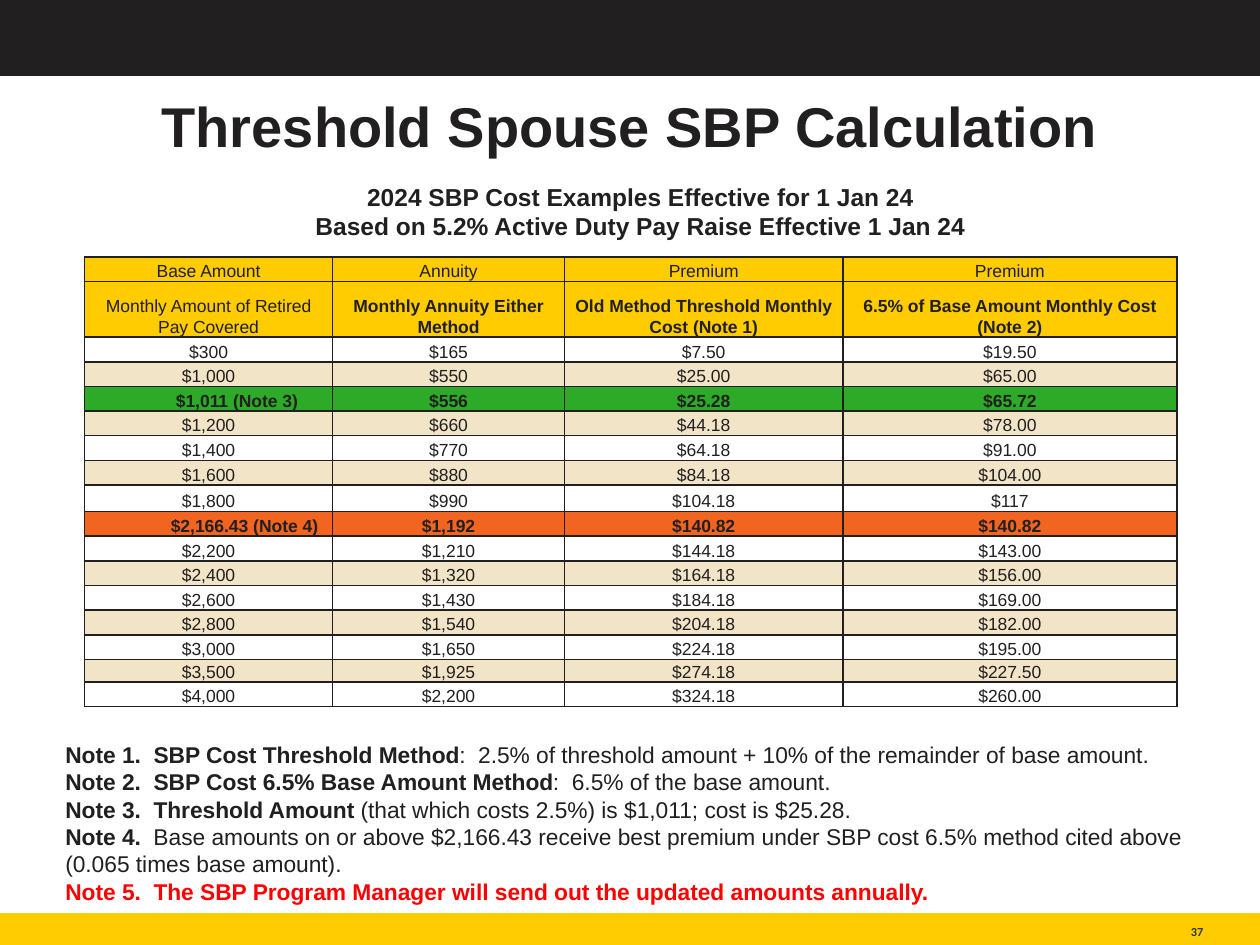
from dataclasses import dataclass

from lxml.etree import SubElement
from pptx import Presentation
from pptx.dml.color import RGBColor
from pptx.enum.shapes import MSO_SHAPE as Preset
from pptx.enum.text import MSO_ANCHOR as Anchor, PP_ALIGN as Align
from pptx.oxml.ns import qn
from pptx.util import Inches, Pt


@dataclass(frozen=True)
class Theme:
    font: str = "Arial"
    number_font: str = "Calibri"
    ink: str = "221F20"
    number_ink: str = "2F372F"
    gold: str = "FFCC01"
    white: str = "FFFFFF"
    sand: str = "F1E4C7"
    green: str = "2DAA27"
    orange: str = "F16521"
    red: str = "FF0000"
    title_size: int = 32
    subtitle_size: int = 14
    note_size: int = 13
    table_size: int = 10
    number_size: int = 7


THEME = Theme()
WIDTH, HEIGHT = 10, 7.5

TITLE = "Threshold Spouse SBP Calculation"
SUBTITLE = [
    "2024 SBP Cost Examples Effective for 1 Jan 24",
    "Based on 5.2% Active Duty Pay Raise Effective 1 Jan 24",
]
PAGE_NUMBER = "37"
HEADERS = [
    ("Base Amount", "Annuity", "Premium", "Premium"),
    ("Monthly Amount of Retired Pay Covered", "Monthly Annuity Either Method",
     "Old Method Threshold Monthly Cost (Note 1)", "6.5% of Base Amount Monthly Cost (Note 2)"),
]
COSTS = [
    ("$300", "$165", "$7.50", "$19.50"),
    ("$1,000", "$550", "$25.00", "$65.00"),
    ("$1,011 (Note 3)", "$556", "$25.28", "$65.72"),
    ("$1,200", "$660", "$44.18", "$78.00"),
    ("$1,400", "$770", "$64.18", "$91.00"),
    ("$1,600", "$880", "$84.18", "$104.00"),
    ("$1,800", "$990", "$104.18", "$117"),
    ("$2,166.43 (Note 4)", "$1,192", "$140.82", "$140.82"),
    ("$2,200", "$1,210", "$144.18", "$143.00"),
    ("$2,400", "$1,320", "$164.18", "$156.00"),
    ("$2,600", "$1,430", "$184.18", "$169.00"),
    ("$2,800", "$1,540", "$204.18", "$182.00"),
    ("$3,000", "$1,650", "$224.18", "$195.00"),
    ("$3,500", "$1,925", "$274.18", "$227.50"),
    ("$4,000", "$2,200", "$324.18", "$260.00"),
]
HIGHLIGHTS = {
    "$1,011 (Note 3)": {"fill": THEME.green, "indent": 0.52},
    "$2,166.43 (Note 4)": {"fill": THEME.orange, "indent": 0.64},
}
NOTES = [
    ("Note 1.  SBP Cost Threshold Method",
     ":  2.5% of threshold amount + 10% of the remainder of base amount.", THEME.ink),
    ("Note 2.  SBP Cost 6.5% Base Amount Method", ":  6.5% of the base amount.", THEME.ink),
    ("Note 3.  Threshold Amount", " (that which costs 2.5%) is $1,011; cost is $25.28.", THEME.ink),
    ("Note 4.", "  Base amounts on or above $2,166.43 receive best premium under SBP cost 6.5% "
     "method cited above (0.065 times base amount).", THEME.ink),
    ("Note 5.  The SBP Program Manager will send out the updated amounts annually.", "", THEME.red),
]

TABLE_BOX = (0.67, 2.04, 8.67, 3.56)
COLUMN_WIDTHS = (1.97, 1.84, 2.21, 2.65)
SPECIAL_ROWS = {1: 0.44, 8: 0.21, 15: 0.17}
CELL_MARGIN = 0.07


def inches(box):
    return [Inches(value) for value in box]


def set_values(target, values):
    for name, value in values.items():
        setattr(target, name, value)


def add_run(paragraph, text, size, bold=False, color=THEME.ink, font=THEME.font):
    run = paragraph.add_run()
    run.text = text
    set_values(run.font, {"name": font, "size": Pt(size), "bold": bold})
    run.font.color.rgb = RGBColor.from_string(color)


def add_text(frame, paragraphs, size, align=Align.LEFT, font=THEME.font):
    for index, runs in enumerate(paragraphs):
        paragraph = frame.add_paragraph() if index else frame.paragraphs[0]
        paragraph.alignment = align
        for text, bold, color in runs:
            add_run(paragraph, text, size, bold, color, font)


def add_text_box(slide, box, **frame_values):
    frame = slide.shapes.add_textbox(*inches(box)).text_frame
    set_values(frame, {"word_wrap": True, **frame_values})
    return frame


def add_bar(slide, top, height, color):
    bar = slide.shapes.add_shape(Preset.RECTANGLE, *inches((0, top, WIDTH, height)))
    bar.shadow.inherit = False
    bar.fill.solid()
    bar.fill.fore_color.rgb = bar.line.color.rgb = RGBColor.from_string(color)
    bar.line.width = Pt(1)


def add_borders(cell):
    properties = cell._tc.get_or_add_tcPr()
    for index, side in enumerate(("lnL", "lnR", "lnT", "lnB")):
        line = SubElement(properties, qn(f"a:{side}"), w=str(Pt(1)))
        SubElement(SubElement(line, qn("a:solidFill")), qn("a:srgbClr"), val=THEME.ink)
        properties.insert(index, line)


def format_cell(cell, text, fill, bold, indent):
    set_values(cell, {
        "vertical_anchor": Anchor.BOTTOM, "margin_left": Inches(indent),
        "margin_right": Inches(CELL_MARGIN), "margin_top": 0, "margin_bottom": 0,
    })
    cell.fill.solid()
    cell.fill.fore_color.rgb = RGBColor.from_string(fill)
    paragraph = cell.text_frame.paragraphs[0]
    set_values(paragraph, {"alignment": Align.CENTER, "line_spacing": 1.07})
    add_run(paragraph, text, THEME.table_size, bold)
    add_borders(cell)


def add_cost_table(slide):
    rows = HEADERS + COSTS
    table = slide.shapes.add_table(len(rows), len(COLUMN_WIDTHS), *inches(TABLE_BOX)).table
    for column, width in zip(table.columns, COLUMN_WIDTHS):
        column.width = Inches(width)
    plain_height = (TABLE_BOX[3] - sum(SPECIAL_ROWS.values())) / (len(rows) - len(SPECIAL_ROWS))
    for row_index, values in enumerate(rows):
        table.rows[row_index].height = Inches(SPECIAL_ROWS.get(row_index, plain_height))
        highlight = HIGHLIGHTS.get(values[0], {})
        is_header = row_index < len(HEADERS)
        band = THEME.gold if is_header else (THEME.white, THEME.sand)[row_index % 2]
        for column_index, text in enumerate(values):
            bold = bool(highlight) or (row_index == 1 and column_index > 0)
            indent = highlight.get("indent", CELL_MARGIN) if column_index == 0 else CELL_MARGIN
            format_cell(table.cell(row_index, column_index), text,
                        highlight.get("fill", band), bold, indent)


def main():
    presentation = Presentation()
    set_values(presentation, {"slide_width": Inches(WIDTH), "slide_height": Inches(HEIGHT)})
    slide = presentation.slides.add_slide(presentation.slide_layouts[5])

    add_bar(slide, 0.01, 0.59, THEME.ink)
    add_bar(slide, 7.25, HEIGHT - 7.25, THEME.gold)

    title = slide.shapes.title
    set_values(title, dict(zip(("left", "top", "width", "height"), inches((0.69, 0.74, 8.62, 1.1)))))
    title.text_frame.vertical_anchor = Anchor.TOP
    add_text(title.text_frame, [[(TITLE, True, THEME.ink)]], THEME.title_size, Align.CENTER)
    title.text_frame.paragraphs[0].line_spacing = 0.9

    subtitle = add_text_box(slide, (1.5, 1.39, 7.17, 0.57), vertical_anchor=Anchor.MIDDLE)
    add_text(subtitle, [[(line, True, THEME.ink)] for line in SUBTITLE],
             THEME.subtitle_size, Align.CENTER)

    add_cost_table(slide)

    notes = add_text_box(slide, (0.42, 5.83, 9.33, 1.41))
    add_text(notes, [[(text, bold, color) for text, bold in ((lead, True), (rest, False)) if text]
                     for lead, rest, color in NOTES], THEME.note_size)

    number = add_text_box(slide, (8.68, 7.25, 0.87, 0.2), word_wrap=False,
                          vertical_anchor=Anchor.BOTTOM, margin_left=0, margin_right=0,
                          margin_top=0, margin_bottom=0)
    add_text(number, [[(PAGE_NUMBER, True, THEME.number_ink)]], THEME.number_size,
             Align.RIGHT, THEME.number_font)

    presentation.save("out.pptx")


if __name__ == "__main__":
    main()
